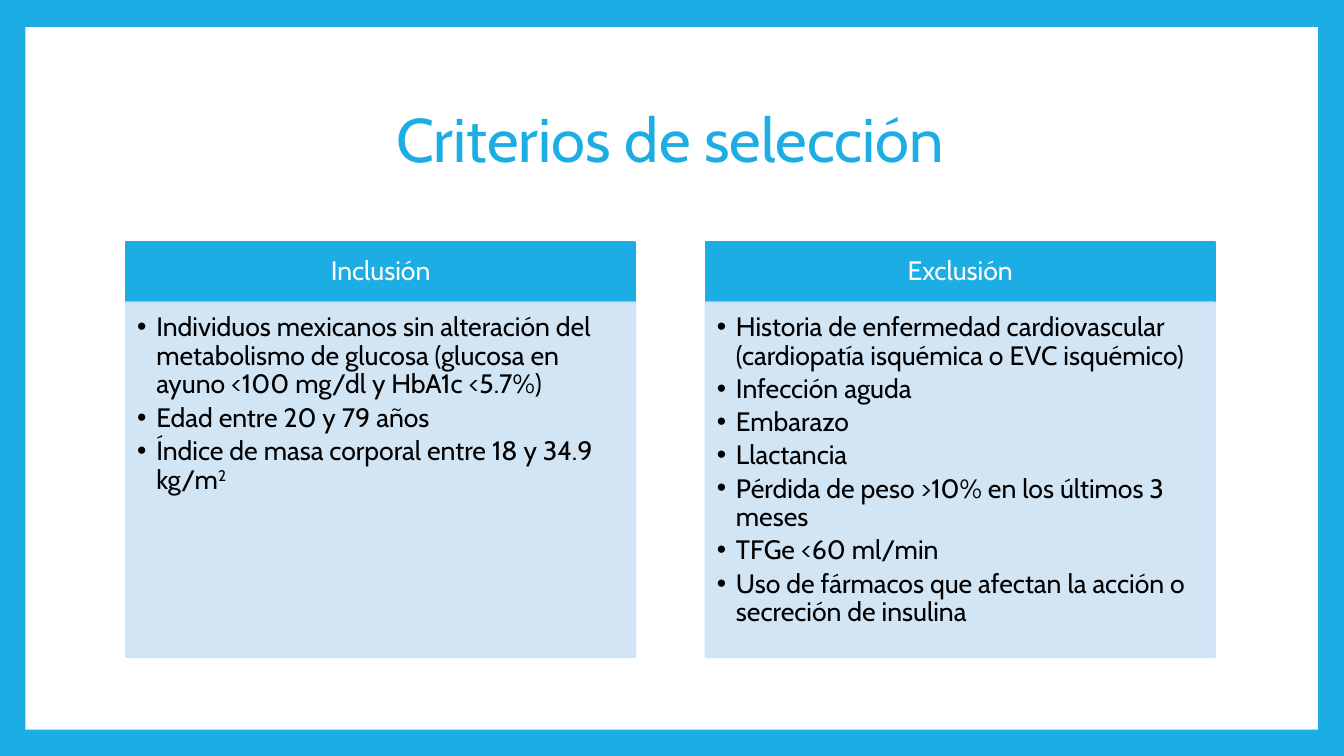
from dataclasses import dataclass

from lxml.etree import SubElement as Sub
from pptx import Presentation
from pptx.dml.color import RGBColor
from pptx.enum.shapes import MSO_SHAPE as Form
from pptx.enum.text import MSO_ANCHOR as Anchor, MSO_AUTO_SIZE as Auto, PP_ALIGN as Align
from pptx.oxml.ns import qn
from pptx.util import Inches, Pt

WIDE, HIGH = Inches(13.33), Inches(7.5)
BLUE, PALE, WHITE, BLACK = "1CADE4", "CDE3F5", "FFFFFF", "000000"
FONT = "Cabin"
LEFT, STEP, SPAN = 9.38, 43.13, 37.88
TOP, HEAD, BODY = 32, 8, 46.93


@dataclass(frozen=True)
class Panel:
    """A heading and its list of criteria."""
    head: str
    items: tuple[str, ...]


PANELS = (
    Panel("Inclusión", (
        "Individuos mexicanos sin alteración del metabolismo de glucosa "
        "(glucosa en ayuno <100 mg/dl y HbA1c <5.7%)",
        "Edad entre 20 y 79 años",
        "Índice de masa corporal entre 18 y 34.9 kg/m^2",
    )),
    Panel("Exclusión", (
        "Historia de enfermedad cardiovascular (cardiopatía isquémica o EVC isquémico)",
        "Infección aguda",
        "Embarazo",
        "Llactancia",
        "Pérdida de peso >10% en los últimos 3 meses",
        "TFGe <60 ml/min",
        "Uso de fármacos que afectan la acción o secreción de insulina",
    )),
)


def rgb(code: str) -> RGBColor:
    """Turn a hex string into a colour."""
    return RGBColor.from_string(code)


def area(x: float, y: float, w: float, h: float) -> tuple[int, ...]:
    """Turn percentages of the slide into lengths."""
    return tuple(round(side * part / 100) for side, part in
                 zip((WIDE, HIGH, WIDE, HIGH), (x, y, w, h)))


def place(shape, *box: float) -> None:
    """Move and size a shape by percentages of the slide."""
    shape.left, shape.top, shape.width, shape.height = area(*box)


def paint(shape, code: str, alpha: int = 100) -> None:
    """Give a shape the same fill and outline, with an opacity."""
    shape.fill.solid()
    shape.fill.fore_color.rgb = rgb(code)
    shape.line.color.rgb = rgb(code)
    shape.line.width = Pt(1.5)
    if alpha < 100:
        for tint in shape._element.spPr.iter(qn("a:srgbClr")):
            Sub(tint, qn("a:alpha"), val=str(alpha * 1000))


def bullet(para) -> None:
    """Add a hanging bullet to a paragraph."""
    props = para._p.get_or_add_pPr()
    props.set("marL", str(Inches(0.19)))
    props.set("indent", str(Inches(-0.19)))
    Sub(props, qn("a:buChar"), char="•")


def write(shape, *lines: str, size: float = 19, color: str = BLACK,
          align: Align = Align.LEFT, anchor: Anchor = Anchor.TOP, after: float = 0,
          inset: tuple[float, ...] = (0.1, 0.05, 0.1, 0.05), dots: bool = False) -> None:
    """Write lines into a shape; a caret marks a superscript ending."""
    frame = shape.text_frame
    frame.word_wrap, frame.auto_size = True, Auto.NONE
    frame.vertical_anchor = anchor
    (frame.margin_left, frame.margin_top,
     frame.margin_right, frame.margin_bottom) = map(Inches, inset)
    for row, line in enumerate(lines):
        para = frame.add_paragraph() if row else frame.paragraphs[0]
        para.alignment, para.line_spacing = align, 0.9
        para.space_before, para.space_after = Pt(0), Pt(after)
        if dots:
            bullet(para)
        for part, text in enumerate(line.split("^")):
            run = para.add_run()
            run.text = text
            font = run.font
            font.name, font.size, font.bold = FONT, Pt(size), False
            font.color.rgb = rgb(color)
            if part:
                run._r.get_or_add_rPr().set("baseline", "30000")


def draw(panel: Panel, col: int, head, body) -> None:
    """Fill a heading and a list placeholder in one column."""
    x = LEFT + col * STEP
    place(head, x, TOP, SPAN, HEAD)
    paint(head, BLUE)
    write(head, panel.head, color=WHITE, align=Align.CENTER, anchor=Anchor.MIDDLE,
          inset=(0.15, 0.08, 0.15, 0.08))
    place(body, x, TOP + HEAD, SPAN, BODY)
    paint(body, PALE, alpha=90)
    write(body, *panel.items, after=3.2, inset=(0.11, 0.11, 0.15, 0.17), dots=True)


def main() -> None:
    """Build and save the slide."""
    deck = Presentation()
    deck.slide_width, deck.slide_height = WIDE, HIGH
    slide = deck.slides.add_slide(deck.slide_layouts[4])
    back = slide.background.fill
    back.solid()
    back.fore_color.rgb = rgb(BLUE)

    sheet = slide.shapes.add_shape(Form.RECTANGLE, *area(1.88, 3.6, 96.17, 92.93))
    sheet.shadow.inherit = False
    paint(sheet, WHITE)
    sheet.line.fill.background()
    slide.shapes._spTree.insert(2, sheet._element)

    title, *slots = slide.placeholders
    place(title, LEFT, 8.93, 81.02, 19.73)
    write(title, "Criterios de selección", size=44, color=BLUE,
          align=Align.CENTER, anchor=Anchor.MIDDLE)
    for col, panel in enumerate(PANELS):
        draw(panel, col, *slots[2 * col:2 * col + 2])
    deck.save("out.pptx")


if __name__ == "__main__":
    main()
